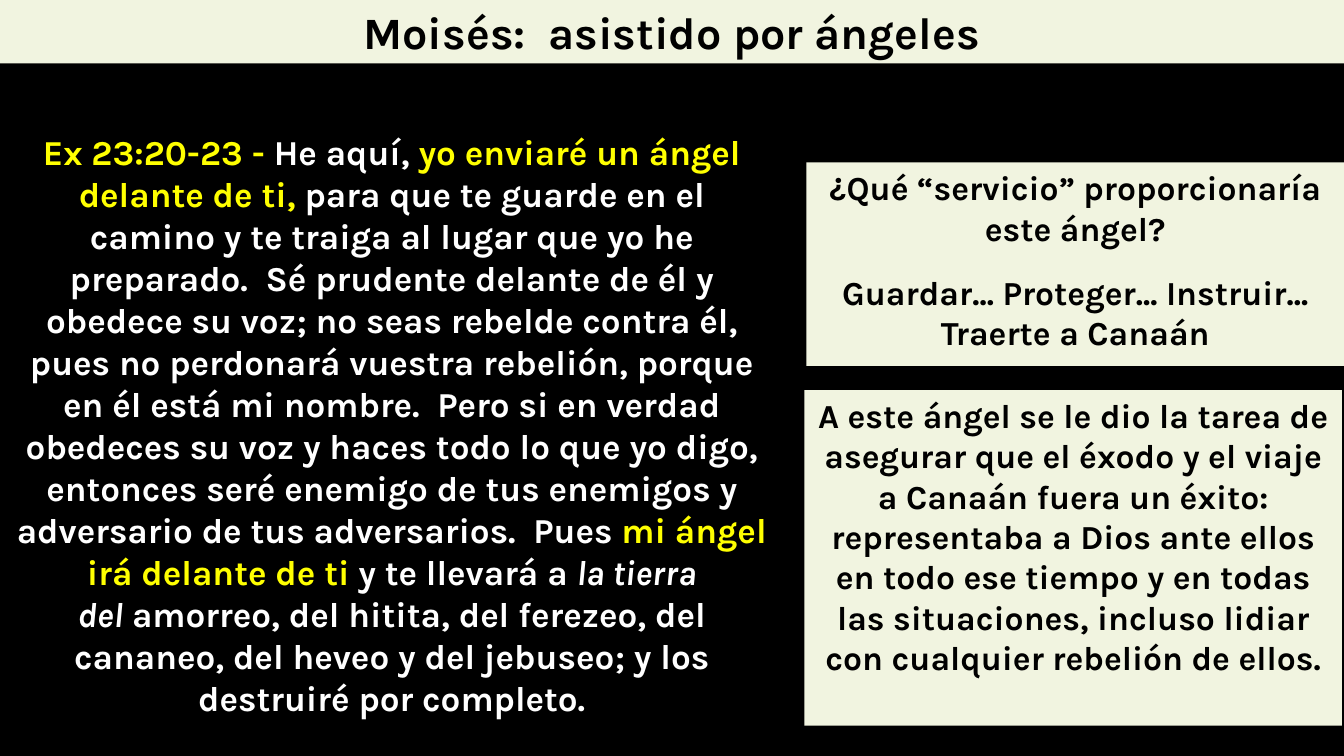
from pptx import Presentation
from pptx.dml.color import RGBColor
from pptx.enum import shapes, text
from pptx.util import Inches, Pt

BLACK = RGBColor(0x00, 0x00, 0x00)
CREAM = RGBColor(0xF1, 0xF4, 0xE0)
WHITE = RGBColor(0xFF, 0xFF, 0xFF)
YELLOW = RGBColor(0xFF, 0xFF, 0x00)
FONT = "Karla"
WIDE, HIGH = 13.33, 7.5
HARD = chr(160)  # no-break space, typed as ~ in VERSE

TITLE = "Moisés:  asistido por ángeles"
ASK = [
    "¿Qué “servicio” proporcionaría este ángel?",
    "Guardar... Proteger... Instruir... Traerte a Canaán",
]
TASK = [
    "A este ángel se le dio la tarea de asegurar que el éxodo y el viaje "
    "a Canaán fuera un éxito: representaba a Dios ante ellos en todo ese "
    "tiempo y en todas las situaciones, incluso lidiar con cualquier "
    "rebelión de ellos."
]
# Each part of the verse: wording, colour, italic
VERSE = [
    ("Ex 23:20-23 - ", YELLOW, False),
    ("He aquí, ", WHITE, False),
    ("yo enviaré un ángel delante de ti, ", YELLOW, False),
    ("para que te guarde en el camino~y te traiga al lugar que yo he "
     "preparado.~~Sé prudente~delante de él y obedece su voz; no seas "
     "rebelde contra él, pues no perdonará vuestra rebelión, porque en él "
     "está mi nombre.~~Pero si en verdad obedeces su voz y haces todo lo "
     "que yo digo, entonces seré enemigo de tus enemigos y adversario de "
     "tus adversarios.~~Pues ", WHITE, False),
    ("mi ángel irá delante de ti ", YELLOW, False),
    ("y te llevará a~", WHITE, False),
    ("la tierra del", WHITE, True),
    ("~amorreo, del hitita, del ferezeo, del cananeo, del heveo y del "
     "jebuseo; y los destruiré por completo.", WHITE, False),
]


def style(para, size):
    para.alignment = text.PP_ALIGN.CENTER
    para.font.name = FONT
    para.font.size = Pt(size)
    para.font.bold = True


def fit(frame):
    frame.word_wrap = True
    frame.auto_size = text.MSO_AUTO_SIZE.SHAPE_TO_FIT_TEXT
    frame.vertical_anchor = text.MSO_ANCHOR.TOP


def panel(slide, box, lines, size, gap=0):
    """Cream rectangle with centred black lines, set apart by gap points."""
    rect = slide.shapes.add_shape(
        shapes.MSO_SHAPE.RECTANGLE, *map(Inches, box))
    rect.shadow.inherit = False
    rect.fill.solid()
    rect.fill.fore_color.rgb = CREAM
    rect.line.fill.background()
    frame = rect.text_frame
    fit(frame)
    for i, line in enumerate(lines):
        para = frame.add_paragraph() if i else frame.paragraphs[0]
        para.text = line
        style(para, size)
        para.font.color.rgb = BLACK
        if i:
            para.space_before = Pt(gap)


def verse(slide, box, parts):
    frame = slide.shapes.add_textbox(*map(Inches, box)).text_frame
    fit(frame)
    para = frame.paragraphs[0]
    style(para, 25)
    for words, color, slant in parts:
        run = para.add_run()
        run.text = words.replace("~", HARD)
        run.font.color.rgb = color
        if slant:
            run.font.italic = True


def main():
    deck = Presentation()
    deck.slide_width, deck.slide_height = Inches(WIDE), Inches(HIGH)
    slide = deck.slides.add_slide(deck.slide_layouts[6])
    slide.background.fill.solid()
    slide.background.fill.fore_color.rgb = BLACK

    side = 0.4 * WIDE
    panel(slide, (WIDE - side, 1.61, side, 2.02), ASK, 24, gap=17)
    panel(slide, (WIDE - side - 0.02, 3.87, side, 3.33), TASK, 24)
    verse(slide, (0.01, 1.25, 7.75, 5.99), VERSE)
    panel(slide, (0, 0, WIDE, 0.63), [TITLE], 32)
    deck.save("out.pptx")


if __name__ == "__main__":
    main()
